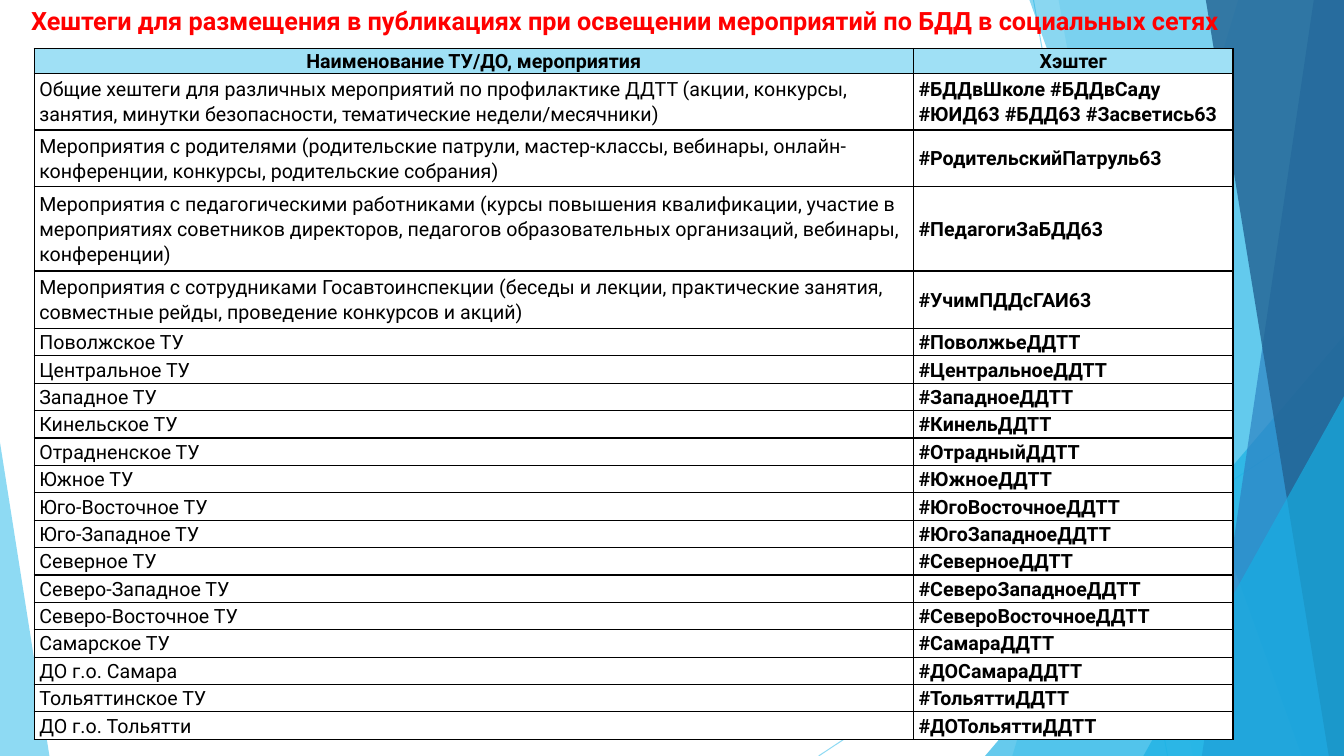
from lxml import etree
from pptx import Presentation
from pptx.dml.color import RGBColor
from pptx.enum.shapes import MSO_CONNECTOR, MSO_SHAPE
from pptx.enum.text import MSO_ANCHOR, MSO_AUTO_SIZE, PP_ALIGN
from pptx.oxml.ns import qn
from pptx.util import Inches, Pt

STRAIGHT, TRIANGLE = MSO_CONNECTOR.STRAIGHT, MSO_SHAPE.ISOSCELES_TRIANGLE
TOP, MIDDLE = MSO_ANCHOR.TOP, MSO_ANCHOR.MIDDLE
LEFT, CENTER = PP_ALIGN.LEFT, PP_ALIGN.CENTER
GROW = MSO_AUTO_SIZE.SHAPE_TO_FIT_TEXT

FONT = "Roboto"
WIDTH, HEIGHT = 13.33, 7.5
COLORS = {
    "sky": "5FCBEF", "cyan": "17B0E4", "blue": "2E83C3", "navy": "226292",
    "header": "9FE0F5", "white": "FFFFFF", "black": "000000", "red": "FF0000",
}

TITLE = "Хештеги для размещения в публикациях при освещении мероприятий по БДД в социальных сетях"
HEADER = ("Наименование ТУ/ДО, мероприятия", "Хэштег")
EVENTS = [
    ("Общие хештеги для различных мероприятий по профилактике ДДТТ (акции, конкурсы, занятия, "
     "минутки безопасности, тематические недели/месячники)",
     "#БДДвШколе #БДДвСаду #ЮИД63 #БДД63 #Засветись63"),
    ("Мероприятия с родителями (родительские патрули, мастер-классы, вебинары, "
     "онлайн-конференции, конкурсы, родительские собрания)",
     "#РодительскийПатруль63"),
    ("Мероприятия с педагогическими работниками (курсы повышения квалификации, участие в "
     "мероприятиях советников директоров, педагогов образовательных организаций, вебинары, "
     "конференции)",
     "#ПедагогиЗаБДД63"),
    ("Мероприятия с сотрудниками Госавтоинспекции (беседы и лекции, практические занятия, "
     "совместные рейды, проведение конкурсов и акций)",
     "#УчимПДДсГАИ63"),
]
OFFICES = [
    ("Поволжское ТУ", "#ПоволжьеДДТТ"),
    ("Центральное ТУ", "#ЦентральноеДДТТ"),
    ("Западное ТУ", "#ЗападноеДДТТ"),
    ("Кинельское ТУ", "#КинельДДТТ"),
    ("Отрадненское ТУ", "#ОтрадныйДДТТ"),
    ("Южное ТУ", "#ЮжноеДДТТ"),
    ("Юго-Восточное ТУ", "#ЮгоВосточноеДДТТ"),
    ("Юго-Западное ТУ", "#ЮгоЗападноеДДТТ"),
    ("Северное ТУ", "#СеверноеДДТТ"),
    ("Северо-Западное ТУ", "#СевероЗападноеДДТТ"),
    ("Северо-Восточное ТУ", "#СевероВосточноеДДТТ"),
    ("Самарское ТУ", "#СамараДДТТ"),
    ("ДО г.о. Самара", "#ДОСамараДДТТ"),
    ("Тольяттинское ТУ", "#ТольяттиДДТТ"),
    ("ДО г.о. Тольятти", "#ДОТольяттиДДТТ"),
]
ROWS = [HEADER] + EVENTS + OFFICES
TABLE_AT = (0.34, 0.48)
COL_WIDTHS = (8.72, 3.17)
OFFICES_HEIGHT = 4.08
ROW_HEIGHTS = [0.25, 0.56, 0.56, 0.84, 0.57] + [OFFICES_HEIGHT / len(OFFICES)] * len(OFFICES)

RAYS = [((10.25, 0), (11.58, HEIGHT)), ((WIDTH, 4.03), (8.12, HEIGHT))]
FACETS = [
    ("band", (12.28, 10.04), "sky", 36),
    ("band", (10.5, 11.83), "sky", 20),
    ("triangle", (9.77, 3.33, 3.56, 4.17, 1), "cyan", 66),
    ("band", (10.21, 12.91), "cyan", 50),
    ("band", (13.03, 11.92), "blue", 70),
    ("band", (11.96, 13.18), "navy", 80),
    ("triangle", (11.34, 3.93, 1.99, 3.57, 1), "cyan", 66),
    ("triangle", (0, 4.39, 0.49, 3.11, 0), "sky", 70),
]


def paint(fill, color, alpha=100):
    fill.solid()
    fill.fore_color.rgb = RGBColor.from_string(COLORS[color])
    if alpha < 100:
        clr = fill._xPr.find(qn("a:solidFill"))[0]
        etree.SubElement(clr, qn("a:alpha"), val=str(alpha * 1000))


def set_all(obj, values):
    for name, value in values.items():
        setattr(obj, name, value)


def write(tf, text, size, color, bold, **layout):
    p = tf.paragraphs[0]
    set_all(p, layout)
    r = p.add_run()
    r.text = text
    set_all(r.font, {"name": FONT, "size": Pt(size), "bold": bold})
    r.font.color.rgb = RGBColor.from_string(COLORS[color])


def add_ray(shapes, start, end):
    line = shapes.add_connector(STRAIGHT, *map(Inches, start + end))
    line.line.width = Pt(0.75)
    paint(line.line.fill, "sky", 70)
    etree.SubElement(line._element.spPr, qn("a:effectLst"))


def add_facet(shapes, kind, geometry, color, alpha):
    if kind == "band":
        top_x, bottom_x = geometry
        corners = [(WIDTH, 0), (WIDTH, HEIGHT), (bottom_x, HEIGHT)]
        builder = shapes.build_freeform(Inches(top_x), 0)
        builder.add_line_segments([(Inches(x), Inches(y)) for x, y in corners], close=True)
        sp = builder.convert_to_shape()
    else:
        *box, apex = geometry
        sp = shapes.add_shape(TRIANGLE, *map(Inches, box))
        sp.adjustments[0] = apex
    sp.shadow.inherit = False
    sp.line.fill.background()
    paint(sp.fill, color, alpha)


def add_borders(cell):
    tcPr = cell._tc.get_or_add_tcPr()
    for i, side in enumerate(("lnL", "lnR", "lnT", "lnB")):
        ln = etree.Element(qn(f"a:{side}"), w=str(Pt(1)))
        solid = etree.SubElement(ln, qn("a:solidFill"))
        etree.SubElement(solid, qn("a:srgbClr"), val=COLORS["black"])
        tcPr.insert(i, ln)


def add_hashtags(shapes):
    size = (sum(COL_WIDTHS), sum(ROW_HEIGHTS))
    frame = shapes.add_table(len(ROWS), len(HEADER), *map(Inches, TABLE_AT + size))
    table = frame.table
    set_all(table, {"first_row": False, "horz_banding": False})
    for column, width in zip(table.columns, COL_WIDTHS):
        column.width = Inches(width)
    for i, (row, height, texts) in enumerate(zip(table.rows, ROW_HEIGHTS, ROWS)):
        row.height = Inches(height)
        head = i == 0
        for j, (cell, text) in enumerate(zip(row.cells, texts)):
            set_all(cell, {
                "margin_left": Inches(0.05), "margin_right": Inches(0.05),
                "margin_top": 0, "margin_bottom": 0,
                "vertical_anchor": TOP if head else MIDDLE,
            })
            paint(cell.fill, "header" if head else "white")
            add_borders(cell)
            write(cell.text_frame, text, 14, "black", head or j == 1,
                  alignment=CENTER if head else LEFT, line_spacing=1.07)


def main():
    prs = Presentation()
    set_all(prs, {"slide_width": Inches(WIDTH), "slide_height": Inches(HEIGHT)})
    shapes = prs.slides.add_slide(prs.slide_layouts[6]).shapes
    for ray in RAYS:
        add_ray(shapes, *ray)
    for facet in FACETS:
        add_facet(shapes, *facet)
    add_hashtags(shapes)
    tf = shapes.add_textbox(*map(Inches, (0.21, 0, 12.48, 0.4))).text_frame
    set_all(tf, {"word_wrap": True, "auto_size": GROW})
    write(tf, TITLE, 18, "red", True)
    prs.save("out.pptx")


if __name__ == "__main__":
    main()
